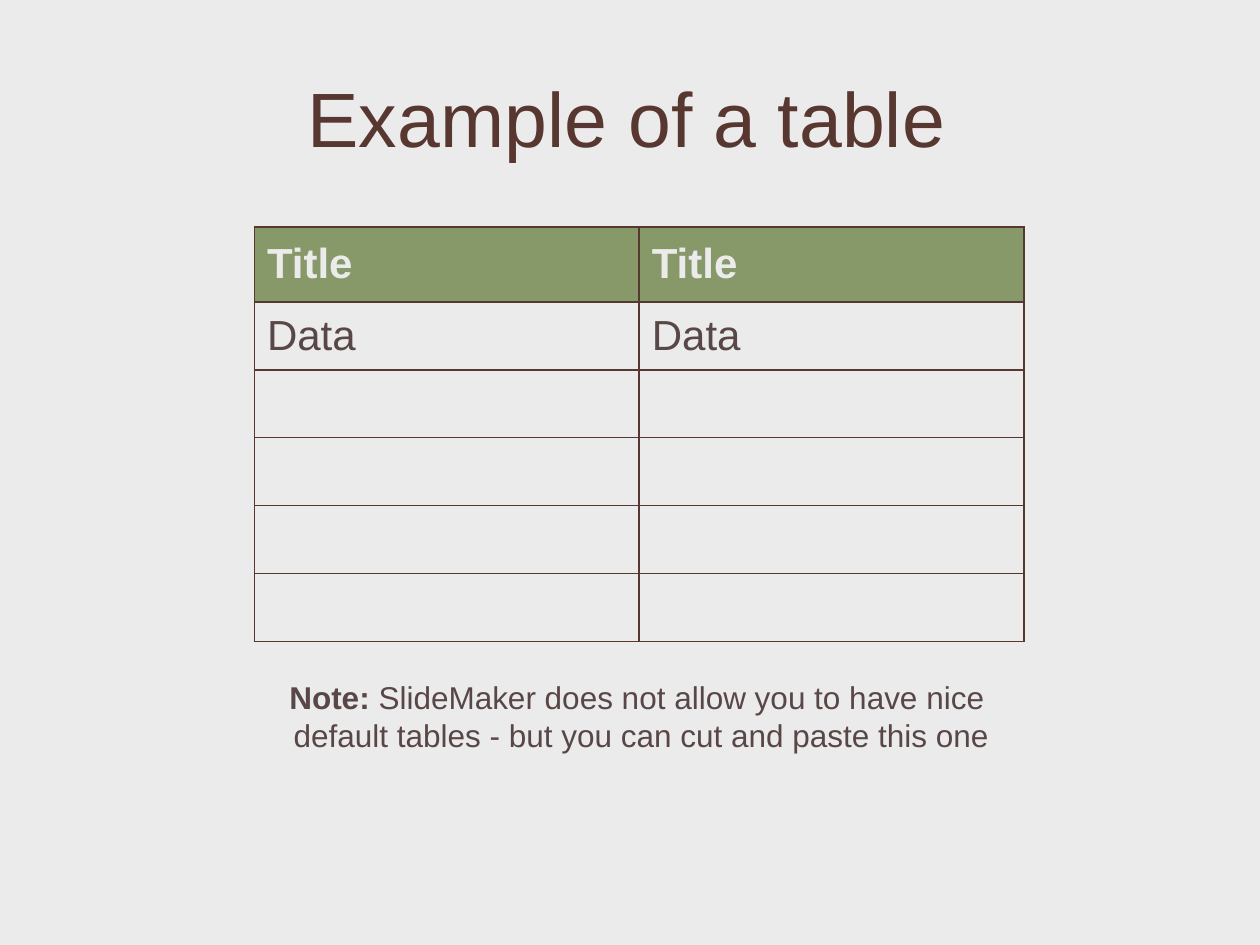
from dataclasses import dataclass

from lxml import etree
from pptx import Presentation
from pptx.dml.color import RGBColor
from pptx.enum.text import MSO_ANCHOR, PP_ALIGN
from pptx.oxml.ns import qn
from pptx.util import Pt

MIDDLE = MSO_ANCHOR.MIDDLE
CENTER = PP_ALIGN.CENTER
TITLE_ONLY = 5


@dataclass(frozen=True)
class Theme:
    font: str = "Arial"
    background: str = "EBEBEB"
    brown: str = "57372F"
    green: str = "879869"
    body: str = "594747"
    title_size: float = 44
    table_size: float = 24
    note_size: float = 18
    border: float = 1


@dataclass(frozen=True)
class Box:
    left: float
    top: float
    width: float
    height: float

    def points(self) -> tuple:
        return Pt(self.left), Pt(self.top), Pt(self.width), Pt(self.height)


@dataclass(frozen=True)
class RowStyle:
    size: float
    color: str
    bold: bool = False
    fill: str = ""


THEME = Theme()
TITLE_BOX = Box(36, 21.6, 644.4, 90)
TABLE_BOX = Box(145.4, 129.6, 439.8, 237)
NOTE_BOX = Box(76.3, 383.8, 580.3, 50.4)
HEADER_HEIGHT = 43

HEADER = RowStyle(THEME.table_size, THEME.background, True, THEME.green)
BODY = RowStyle(THEME.table_size, THEME.body)
ROWS = [("Title", "Title"), ("Data", "Data")] + [("", "")] * 4


def style_font(font, size: float, color: str, bold: bool = False) -> None:
    formats = {"name": THEME.font, "size": Pt(size), "bold": bold}
    for attribute, value in formats.items():
        setattr(font, attribute, value)
    font.color.rgb = RGBColor.from_string(color)


def add_borders(cell) -> None:
    """Put the four edge lines ahead of the cell fill, as the schema asks."""
    properties = cell._tc.get_or_add_tcPr()
    for index, edge in enumerate(("a:lnL", "a:lnR", "a:lnT", "a:lnB")):
        line = etree.Element(qn(edge), w=str(Pt(THEME.border)))
        solid = etree.SubElement(line, qn("a:solidFill"))
        etree.SubElement(solid, qn("a:srgbClr"), val=THEME.brown)
        properties.insert(index, line)


def fill_cell(cell, text: str, style: RowStyle) -> None:
    cell.vertical_anchor = MIDDLE
    if style.fill:
        cell.fill.solid()
        cell.fill.fore_color.rgb = RGBColor.from_string(style.fill)
    else:
        cell.fill.background()
    add_borders(cell)
    cell.text = text
    style_font(cell.text_frame.paragraphs[0].font, style.size, style.color, style.bold)


def add_title(slide, text: str) -> None:
    title = slide.shapes.title
    title.left, title.top, title.width, title.height = TITLE_BOX.points()
    title.text_frame.text = text
    title.text_frame.vertical_anchor = MIDDLE
    paragraph = title.text_frame.paragraphs[0]
    paragraph.alignment = CENTER
    style_font(paragraph.runs[0].font, THEME.title_size, THEME.brown)


def add_data_table(slide) -> None:
    table = slide.shapes.add_table(len(ROWS), len(ROWS[0]), *TABLE_BOX.points()).table
    table.first_row = table.horz_banding = False
    body_height = (TABLE_BOX.height - HEADER_HEIGHT) / (len(ROWS) - 1)
    for index, texts in enumerate(ROWS):
        table.rows[index].height = Pt(body_height if index else HEADER_HEIGHT)
        for cell, text in zip(table.rows[index].cells, texts):
            fill_cell(cell, text, BODY if index else HEADER)


def add_note(slide, label: str, lines: list[str]) -> None:
    frame = slide.shapes.add_textbox(*NOTE_BOX.points()).text_frame
    frame.word_wrap = True
    paragraph = frame.paragraphs[0]
    paragraph.alignment = CENTER
    for index, text in enumerate([label, *lines]):
        if index > 1:
            paragraph.add_line_break()
        run = paragraph.add_run()
        run.text = text
        style_font(run.font, THEME.note_size, THEME.body, index == 0)


def main() -> None:
    deck = Presentation()
    deck.slide_width, deck.slide_height = Pt(720), Pt(540)
    slide = deck.slides.add_slide(deck.slide_layouts[TITLE_ONLY])
    slide.background.fill.solid()
    slide.background.fill.fore_color.rgb = RGBColor.from_string(THEME.background)

    # Heading, table and the remark below it
    add_title(slide, "Example of a table")
    add_data_table(slide)
    add_note(slide, "Note: ", [
        "SlideMaker does not allow you to have nice ",
        "default tables - but you can cut and paste this one",
    ])
    deck.save("out.pptx")


if __name__ == "__main__":
    main()
